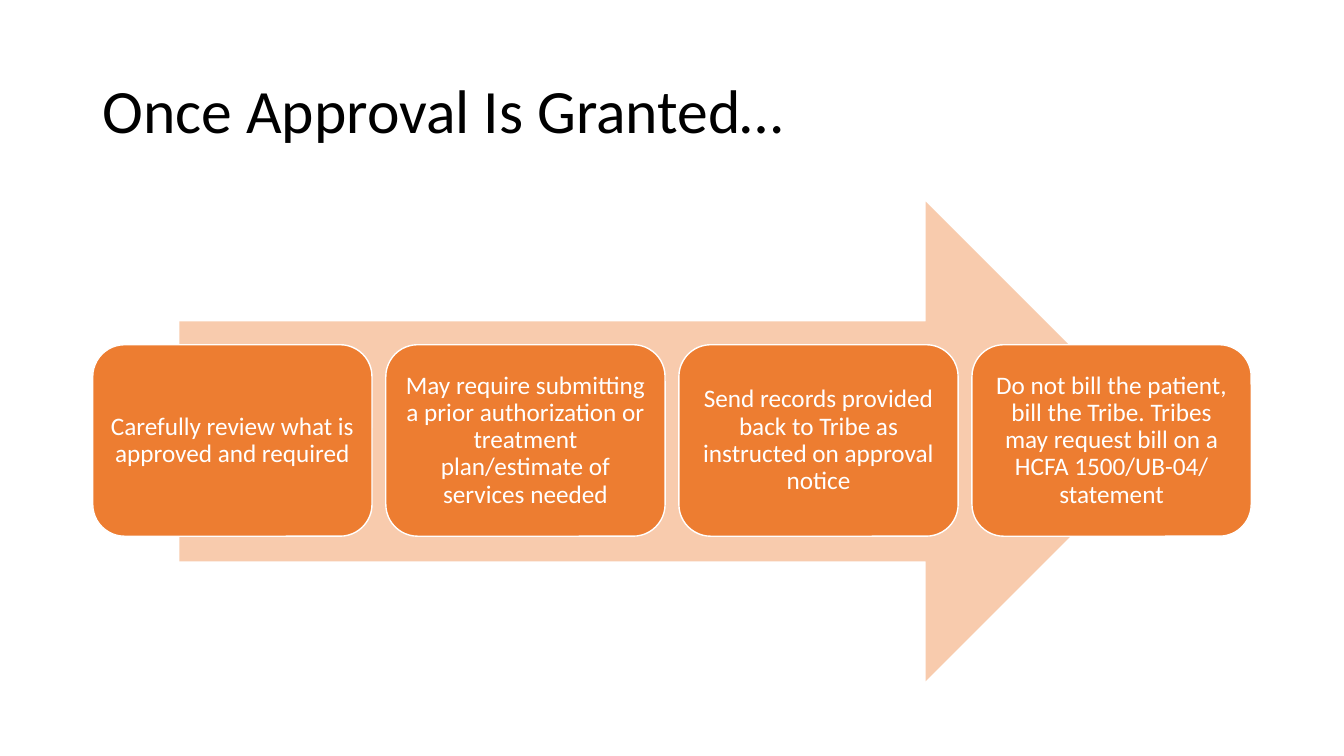
from dataclasses import dataclass

import pptx
import pptx.dml.color
import pptx.enum.shapes
import pptx.enum.text
import pptx.shapes.autoshape
import pptx.slide
import pptx.util

Inches = pptx.util.Inches
Pt = pptx.util.Pt
MSO_SHAPE = pptx.enum.shapes.MSO_SHAPE
PP_ALIGN = pptx.enum.text.PP_ALIGN
ANCHOR = pptx.enum.text.MSO_ANCHOR

FONT = "Calibri"
BLACK, WHITE = "000000", "FFFFFF"
ORANGE, PALE_ORANGE = "ED7D31", "F8CBAD"


@dataclass(frozen=True)
class Box:
    left: float
    top: float
    width: float
    height: float

    def emu(self) -> list[int]:
        return [Inches(v) for v in (self.left, self.top, self.width, self.height)]


@dataclass(frozen=True)
class TextStyle:
    size: float
    color: str
    align: PP_ALIGN
    inset_x: float
    inset_y: float
    space_after: float = 0


TITLE = TextStyle(44, BLACK, PP_ALIGN.LEFT, 0.1, 0.05)
STEP = TextStyle(18, WHITE, PP_ALIGN.CENTER, 0.07, 0.07, 6.3)

TITLE_BOX = Box(0.92, 0.4, 11.5, 1.45)
ARROW_BOX = Box(1.78, 2, 9.78, 4.76)
FIRST_STEP = Box(0.92, 3.42, 2.77, 1.9)
LAST_STEP_LEFT = 9.64
STEPS = [
    "Carefully review what is approved and required",
    "May require submitting a prior authorization or treatment plan/estimate of services needed",
    "Send records provided back to Tribe as instructed on approval notice",
    "Do not bill the patient, bill the Tribe. Tribes may request bill on a HCFA 1500/UB-04/ statement",
]


def rgb(color: str) -> pptx.dml.color.RGBColor:
    return pptx.dml.color.RGBColor.from_string(color)


def set_all(obj: object, values: dict[str, object]) -> None:
    for name, value in values.items():
        setattr(obj, name, value)


def write(sp: pptx.shapes.autoshape.Shape, text: str, style: TextStyle) -> None:
    tf = sp.text_frame
    set_all(tf, {
        "word_wrap": True,
        "vertical_anchor": ANCHOR.MIDDLE,
        "margin_left": Inches(style.inset_x),
        "margin_right": Inches(style.inset_x),
        "margin_top": Inches(style.inset_y),
        "margin_bottom": Inches(style.inset_y),
    })
    p = tf.paragraphs[0]
    set_all(p, {
        "alignment": style.align,
        "line_spacing": 0.9,
        "space_after": Pt(style.space_after),
    })
    r = p.add_run()
    r.text = text
    set_all(r.font, {"name": FONT, "size": Pt(style.size)})
    r.font.color.rgb = rgb(style.color)


def add_filled(s: pptx.slide.Slide, kind: MSO_SHAPE, box: Box, fill: str,
               line: str | None = None) -> pptx.shapes.autoshape.Shape:
    sp = s.shapes.add_shape(kind, *box.emu())
    sp.shadow.inherit = False
    sp.fill.solid()
    sp.fill.fore_color.rgb = rgb(fill)
    if line:
        sp.line.color.rgb = rgb(line)
        sp.line.width = Pt(1)
    else:
        sp.line.fill.background()
    return sp


def main() -> None:
    prs = pptx.Presentation()
    set_all(prs, {"slide_width": Inches(13.33), "slide_height": Inches(7.5)})
    s = prs.slides.add_slide(prs.slide_layouts[6])

    write(s.shapes.add_textbox(*TITLE_BOX.emu()), "Once Approval Is Granted…", TITLE)
    add_filled(s, MSO_SHAPE.RIGHT_ARROW, ARROW_BOX, PALE_ORANGE)

    pitch = (LAST_STEP_LEFT - FIRST_STEP.left) / (len(STEPS) - 1)
    for i, text in enumerate(STEPS):
        box = Box(FIRST_STEP.left + i * pitch, FIRST_STEP.top,
                  FIRST_STEP.width, FIRST_STEP.height)
        sp = add_filled(s, MSO_SHAPE.ROUNDED_RECTANGLE, box, ORANGE, WHITE)
        write(sp, text, STEP)

    prs.save("out.pptx")


if __name__ == "__main__":
    main()
